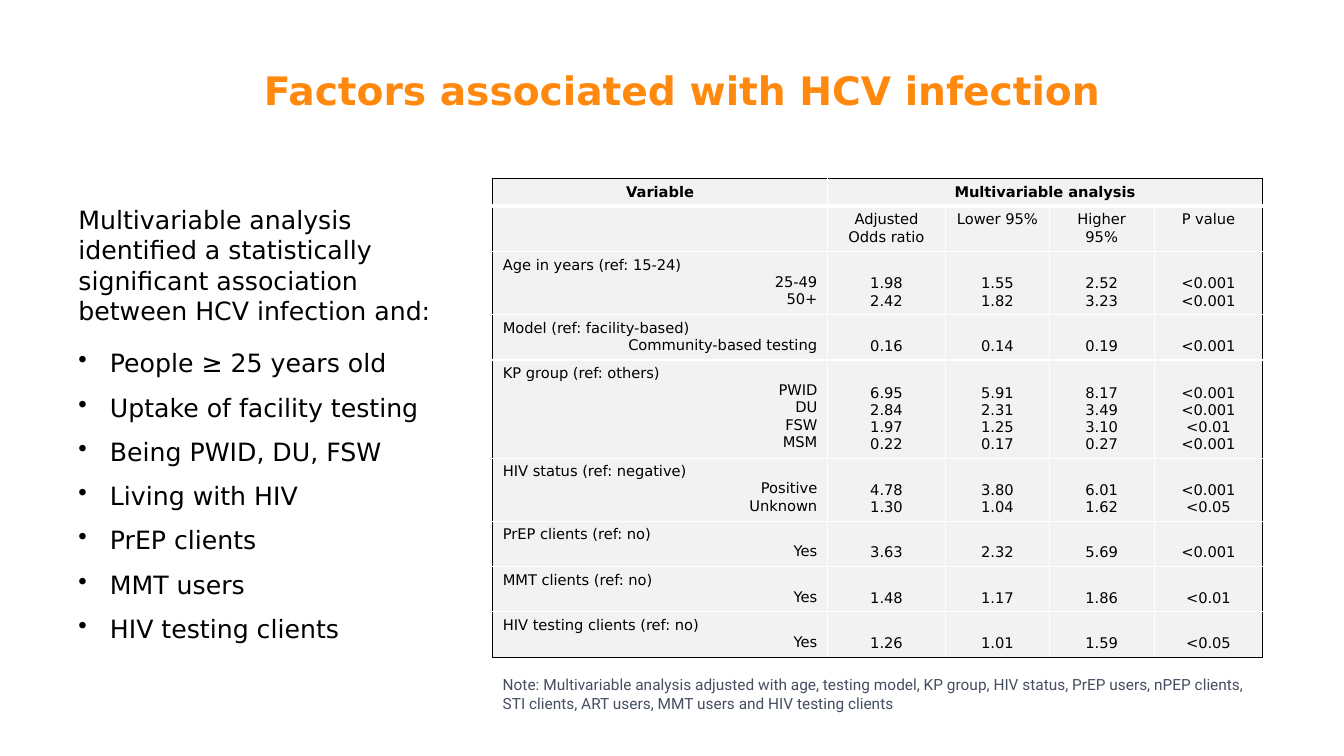
from lxml import etree
from pptx import Presentation
from pptx.dml.color import RGBColor
from pptx.enum import text
from pptx.oxml import ns
from pptx.util import Pt

COLORS = {"title": "FF890E", "ink": "000000", "note": "454E60", "cell": "F2F2F2", "grid": "FFFFFF"}
MAIN_FONT = "DejaVu Sans"
LEFT, CENTER, RIGHT = text.PP_ALIGN.LEFT, text.PP_ALIGN.CENTER, text.PP_ALIGN.RIGHT

RISKS = ["People ≥ 25 years old", "Uptake of facility testing", "Being PWID, DU, FSW",
         "Living with HIV", "PrEP clients", "MMT users", "HIV testing clients"]
INTRO = "Multivariable analysis identified a statistically significant association between HCV infection and:"
NOTE = ("Note: Multivariable analysis adjusted with age, testing model, KP group, HIV status, PrEP users, "
        "nPEP clients, STI clients, ART users, MMT users and HIV testing clients")
MEASURES = ["Adjusted Odds ratio", "Lower 95%", "Higher 95%", "P value"]
FACTORS = [
    ("Age in years (ref: 15-24)", [
        ("25-49", "1.98", "1.55", "2.52", "<0.001"),
        ("50+", "2.42", "1.82", "3.23", "<0.001")]),
    ("Model (ref: facility-based)", [
        ("Community-based testing", "0.16", "0.14", "0.19", "<0.001")]),
    ("KP group (ref: others)", [
        ("PWID", "6.95", "5.91", "8.17", "<0.001"),
        ("DU", "2.84", "2.31", "3.49", "<0.001"),
        ("FSW", "1.97", "1.25", "3.10", "<0.01"),
        ("MSM", "0.22", "0.17", "0.27", "<0.001")]),
    ("HIV status (ref: negative)", [
        ("Positive", "4.78", "3.80", "6.01", "<0.001"),
        ("Unknown", "1.30", "1.04", "1.62", "<0.05")]),
    ("PrEP clients (ref: no)", [("Yes", "3.63", "2.32", "5.69", "<0.001")]),
    ("MMT clients (ref: no)", [("Yes", "1.48", "1.17", "1.86", "<0.01")]),
    ("HIV testing clients (ref: no)", [("Yes", "1.26", "1.01", "1.59", "<0.05")]),
]
COLUMN_WIDTHS = [239, 84.5, 74, 75, 77.5]


def format_runs(tf, size, color, font=MAIN_FONT, bold=False):
    for p in tf.paragraphs:
        for r in p.runs:
            r.font.size, r.font.name, r.font.bold = Pt(size), font, bold
            r.font.color.rgb = RGBColor.from_string(COLORS[color])


def add_text(s, box, content, inset=True):
    tf = s.shapes.add_textbox(*map(Pt, box)).text_frame
    tf.word_wrap = True
    if not inset:
        tf.margin_left = tf.margin_top = tf.margin_right = tf.margin_bottom = 0
    tf.text = content
    return tf


def add_bullet(p, indent):
    pPr = p._p.get_or_add_pPr()
    pPr.set("marL", str(Pt(indent)))
    pPr.set("indent", str(Pt(-indent)))
    etree.SubElement(pPr, ns.qn("a:buChar")).set("char", "•")


def add_title(s):
    tf = add_text(s, (188.5, 18, 759.5, 96.5), "Factors associated with HCV infection", inset=False)
    tf.vertical_anchor = text.MSO_ANCHOR.MIDDLE
    tf.paragraphs[0].line_spacing = 0.9
    format_runs(tf, 28, "title", bold=True)


def add_risk_list(s):
    tf = add_text(s, (56, 146, 269.5, 335.5), "\n".join([INTRO, *RISKS]), inset=False)
    tf.paragraphs[0].space_after = Pt(6)
    for p in tf.paragraphs[1:]:
        p.space_before = Pt(10)
        add_bullet(p, 22.5)
    format_runs(tf, 18, "ink")


def set_border(cell, side, color, width):
    ln = etree.SubElement(cell._tc.get_or_add_tcPr(), ns.qn(f"a:ln{side}"), w=str(Pt(width)))
    fill = etree.SubElement(ln, ns.qn("a:solidFill"))
    etree.SubElement(fill, ns.qn("a:srgbClr"), val=COLORS[color])


def style_cell(cell, row, col, last_row, last_col):
    right = col + (cell.span_width if cell.is_merge_origin else 1) - 1
    outer = {"L": col == 0, "R": right == last_col, "T": row == 0, "B": row == last_row}
    thick = {"T": row == 1, "B": row == 0}
    for side, is_outer in outer.items():
        set_border(cell, side, "ink" if is_outer else "grid", 3 if thick.get(side) else 1)
    cell.fill.solid()
    cell.fill.fore_color.rgb = RGBColor.from_string(COLORS["cell"])
    format_runs(cell.text_frame, 10.5, "ink", bold=row == 0)


def fill_cell(cell, lines, *aligns):
    cell.text_frame.text = "\n".join(lines)
    for i, p in enumerate(cell.text_frame.paragraphs):
        p.alignment = aligns[min(i, len(aligns) - 1)]


def add_factor_table(s):
    line_counts = [1, 2] + [1 + len(levels) for _, levels in FACTORS]
    heights = [7.2 + 12.23 * n for n in line_counts]
    table = s.shapes.add_table(len(heights), len(COLUMN_WIDTHS), Pt(352), Pt(127.5),
                               Pt(sum(COLUMN_WIDTHS)), Pt(sum(heights))).table
    table.first_row = table.horz_banding = False
    for column, width in zip(table.columns, COLUMN_WIDTHS):
        column.width = Pt(width)
    for row, height in zip(table.rows, heights):
        row.height = Pt(height)

    last_row, last_col = len(heights) - 1, len(COLUMN_WIDTHS) - 1
    table.cell(0, 1).merge(table.cell(0, last_col))
    fill_cell(table.cell(0, 0), ["Variable"], CENTER)
    fill_cell(table.cell(0, 1), ["Multivariable analysis"], CENTER)
    for col, measure in enumerate(MEASURES, 1):
        fill_cell(table.cell(1, col), [measure], CENTER)
    for row, (factor, levels) in enumerate(FACTORS, 2):
        names, *values = zip(*levels)
        fill_cell(table.cell(row, 0), [factor, *names], LEFT, RIGHT)
        for col, column_values in enumerate(values, 1):
            fill_cell(table.cell(row, col), column_values, CENTER)
            table.cell(row, col).vertical_anchor = text.MSO_ANCHOR.BOTTOM
    for row in range(last_row + 1):
        for col in range(last_col + 1):
            style_cell(table.cell(row, col), row, col, last_row, last_col)


def add_note(s):
    tf = add_text(s, (352, 479, 550, 34), NOTE)
    format_runs(tf, 11, "note", font="Roboto")


def main():
    prs = Presentation()
    prs.slide_width, prs.slide_height = Pt(960), Pt(540)
    s = prs.slides.add_slide(prs.slide_layouts[6])
    add_title(s)
    add_risk_list(s)
    add_factor_table(s)
    add_note(s)
    prs.save("out.pptx")


if __name__ == "__main__":
    main()
